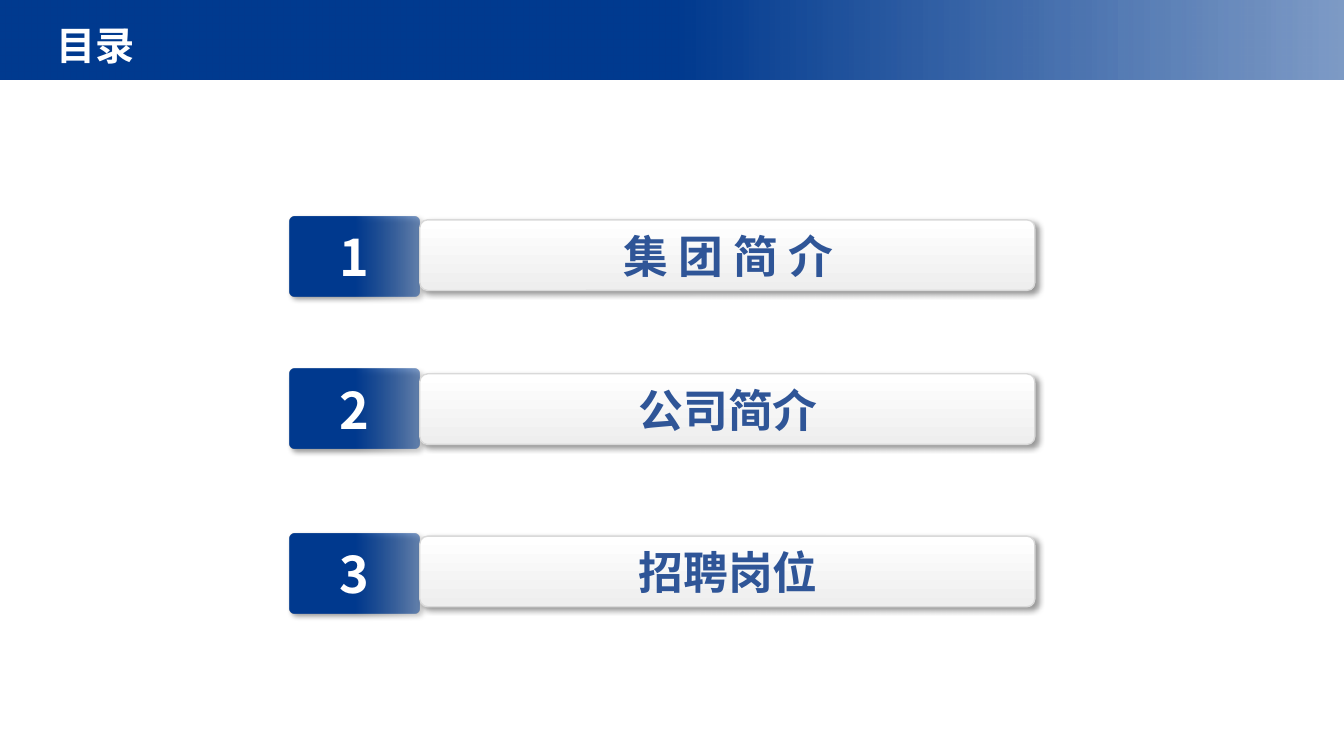
from lxml.etree import SubElement
from pptx import Presentation
from pptx.dml.color import RGBColor
from pptx.enum.shapes import MSO_SHAPE
from pptx.enum.text import MSO_ANCHOR, PP_ALIGN
from pptx.oxml.ns import qn
from pptx.util import Cm, Pt

FACE = "Noto Sans CJK SC"
NAVY = RGBColor(0x00, 0x3A, 0x8F)
BLUE = RGBColor(0x2F, 0x55, 0x97)
WHITE = RGBColor(0xFF, 0xFF, 0xFF)
PALE = RGBColor(0xEE, 0xEE, 0xEE)
GREY = RGBColor(0xD9, 0xD9, 0xD9)
BLACK = RGBColor(0x00, 0x00, 0x00)

# Gradient stops: position, colour, opacity in percent
FADE = [(0, NAVY, 100), (50, NAVY, 100), (100, NAVY, 50)]
SHEEN = [(0, WHITE, 100), (100, PALE, 100)]

deck = Presentation()
deck.slide_width, deck.slide_height = Cm(33.87), Cm(19.05)
slide = deck.slides.add_slide(deck.slide_layouts[6])


def add_panel(kind, box, stops, angle, shade=True):
    """Add a gradient shape, with a soft shadow if wanted."""
    panel = slide.shapes.add_shape(kind, *map(Cm, box))
    panel.line.fill.background()
    panel.shadow.inherit = False
    panel.fill.gradient()
    panel.fill.gradient_angle = angle
    props = panel.element.spPr
    ramp = props.find(".//" + qn("a:gsLst"))
    ramp.clear()
    for place, tint, alpha in stops:
        stop = SubElement(ramp, qn("a:gs"), pos=str(place * 1000))
        color = SubElement(stop, qn("a:srgbClr"), val=str(tint))
        if alpha < 100:
            SubElement(color, qn("a:alpha"), val=str(alpha * 1000))
    if shade:
        drop = SubElement(
            props.find(qn("a:effectLst")), qn("a:outerShdw"),
            blurRad=str(Pt(4)), dist=str(Pt(3)), dir="2700000",
            algn="tl", rotWithShape="0")
        color = SubElement(drop, qn("a:srgbClr"), val=str(BLACK))
        SubElement(color, qn("a:alpha"), val="40000")
    return panel


def set_text(shape, text, size, tint, align, pads, wrap=True):
    """Write one bold line, centred vertically."""
    frame = shape.text_frame
    sides = ("left", "top", "right", "bottom")
    form = {"margin_" + side: Cm(pad) for side, pad in zip(sides, pads)}
    form.update(word_wrap=wrap, vertical_anchor=MSO_ANCHOR.MIDDLE)
    for key, value in form.items():
        setattr(frame, key, value)
    line = frame.paragraphs[0]
    line.alignment = align
    run = line.add_run()
    run.text = text
    for key, value in {"name": FACE, "size": Pt(size), "bold": True}.items():
        setattr(run.font, key, value)
    run.font.color.rgb = tint
    SubElement(run.font._element, qn("a:ea"), typeface=FACE)
    return run


# Header band and title
add_panel(MSO_SHAPE.RECTANGLE, (0, 0, 33.87, 2.01), FADE, 0, shade=False)
title = slide.shapes.add_textbox(Cm(1.09), Cm(0.46), Cm(27.03), Cm(1.32))
set_text(title, "目录", 28, WHITE, PP_ALIGN.LEFT, (0.33, 0.18, 0.33, 0.18))

# Contents: number tile and label bar in each row
rows = [("集 团 简 介", 5.46, 5.54), ("公司简介", 9.3, 9.42),
        ("招聘岗位", 13.44, 13.51)]
for count, (name, top, bar_top) in enumerate(rows, 1):
    tile = add_panel(MSO_SHAPE.ROUNDED_RECTANGLE,
                     (7.3, top, 3.28, 2.01), FADE, 0)
    tile.adjustments[0] = 0.065
    digit = set_text(tile, str(count), 36, WHITE, PP_ALIGN.CENTER,
                     (0.18, 0.1, 0.18, 0.1))
    digit.font._element.set("spc", "220")

    bar = add_panel(MSO_SHAPE.ROUNDED_RECTANGLE,
                    (10.58, bar_top, 15.5, 1.78), SHEEN, 270)
    bar.adjustments[0] = 0.112
    bar.line.color.rgb = GREY
    bar.line.width = Pt(1)
    set_text(bar, name, 32, BLUE, PP_ALIGN.CENTER,
             (0.25, 0.25, 0.2, 0.25), wrap=False)

deck.save("out.pptx")
